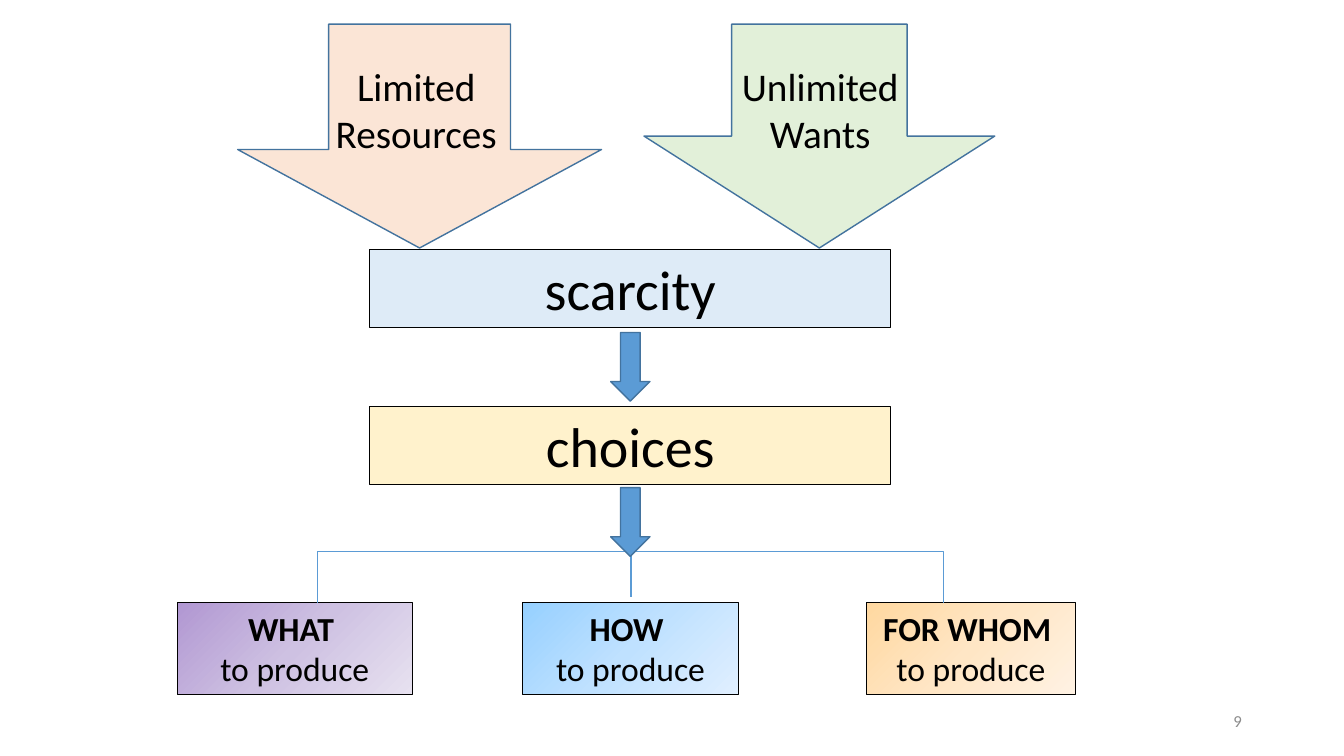
from copy import deepcopy
from dataclasses import dataclass

from pptx import Presentation
from pptx.dml.color import RGBColor
from pptx.enum.shapes import MSO_CONNECTOR, MSO_SHAPE
from pptx.enum.text import MSO_ANCHOR, MSO_AUTO_SIZE, PP_ALIGN
from pptx.oxml.ns import qn
from pptx.shapes.autoshape import Shape
from pptx.slide import Slide
from pptx.util import Cm, Pt

FONT = "Calibri"
COLORS = {
    "black": "000000",
    "grey": "8C8C8C",
    "blue": "5B9BD5",
    "edge": "43739E",
    "peach": "FBE5D6",
    "green": "E2F0D9",
    "pale blue": "DEEBF7",
    "yellow": "FFF2CC",
}
GRADIENTS = {
    "purple": ("B197D2", "CEC1E2", "E7E1F0"),
    "sky": ("96D0FF", "BFE1FF", "E0EFFF"),
    "orange": ("FFD8A0", "FFE6C5", "FFF2E3"),
}


@dataclass(frozen=True)
class Box:
    left: float
    top: float
    width: float
    height: float


@dataclass(frozen=True)
class Arrow:
    box: Box
    fill: str
    head: float = 0.5


@dataclass(frozen=True)
class Label:
    box: Box
    text: str
    size: int


@dataclass(frozen=True)
class Panel:
    label: Label
    fill: str


CAUSES = (
    Arrow(Box(5.99, 0.61, 9.17, 5.64), "peach", 0.44),
    Arrow(Box(16.23, 0.61, 8.84, 5.64), "green"),
)
CAUSE_LABELS = (
    Label(Box(8.18, 1.45, 4.62, 2.64), "Limited\nResources", 28),
    Label(Box(18.42, 1.45, 4.5, 2.64), "Unlimited\nWants", 28),
)
STAGES = (
    Panel(Label(Box(9.32, 6.3, 13.13, 1.96), "scarcity", 40), "pale blue"),
    Panel(Label(Box(9.32, 10.24, 13.13, 1.96), "choices", 40), "yellow"),
)
QUESTIONS = (
    Panel(Label(Box(4.47, 15.19, 5.92, 2.31), "WHAT \nto produce", 24), "purple"),
    Panel(Label(Box(13.16, 15.19, 5.46, 2.31), "HOW \nto produce", 24), "sky"),
    Panel(Label(Box(21.84, 15.19, 5.26, 2.31), "FOR WHOM \nto produce", 24), "orange"),
)
STEPS = tuple(Arrow(Box(15.39, top, 0.99, 1.73), "blue") for top in (8.38, 12.29))
BRACE = Box(14.61, 6.02, 2.57, 15.77)
PAGE_NUMBER = Label(Box(23.93, 17.65, 7.62, 1.02), "9", 12)


def rgb(name: str) -> RGBColor:
    return RGBColor.from_string(COLORS[name])


def place(box: Box) -> tuple[Cm, Cm, Cm, Cm]:
    return Cm(box.left), Cm(box.top), Cm(box.width), Cm(box.height)


def add_outlined(s: Slide, kind: MSO_SHAPE, box: Box, line: str, width: float) -> Shape:
    sp = s.shapes.add_shape(kind, *place(box))
    sp.shadow.inherit = False
    sp.line.color.rgb = rgb(line)
    sp.line.width = Pt(width)
    return sp


def fill_solid(sp: Shape, name: str) -> None:
    sp.fill.solid()
    sp.fill.fore_color.rgb = rgb(name)


def fill_gradient(sp: Shape, name: str) -> None:
    sp.fill.gradient()
    sp.fill.gradient_angle = 315
    stops = sp.element.spPr.find(qn("a:gradFill")).find(qn("a:gsLst"))
    stops.insert(1, deepcopy(stops[0]))
    for i, (stop, color) in enumerate(zip(sp.fill.gradient_stops, GRADIENTS[name])):
        stop.position = i / 2
        stop.color.rgb = RGBColor.from_string(color)


def write(sp: Shape, label: Label, color: str = "black",
          align: PP_ALIGN = PP_ALIGN.CENTER) -> None:
    tf = sp.text_frame
    tf.text = label.text
    for p in tf.paragraphs:
        p.alignment = align
        for r in p.runs:
            r.font.name = FONT
            r.font.size = Pt(label.size)
            r.font.color.rgb = rgb(color)


def add_arrow(s: Slide, arrow: Arrow) -> None:
    sp = add_outlined(s, MSO_SHAPE.DOWN_ARROW, arrow.box, "edge", 1)
    sp.adjustments[1] = arrow.head
    fill_solid(sp, arrow.fill)


def add_panel(s: Slide, panel: Panel) -> Shape:
    sp = add_outlined(s, MSO_SHAPE.RECTANGLE, panel.label.box, "black", 0.75)
    if panel.fill in GRADIENTS:
        fill_gradient(sp, panel.fill)
    else:
        fill_solid(sp, panel.fill)
    write(sp, panel.label)
    tf = sp.text_frame
    tf.word_wrap = True
    tf.vertical_anchor = MSO_ANCHOR.TOP
    tf.auto_size = MSO_AUTO_SIZE.SHAPE_TO_FIT_TEXT
    return sp


def add_question(s: Slide, panel: Panel) -> None:
    sp = add_panel(s, panel)
    sp.text_frame.paragraphs[0].runs[0].font.bold = True


def add_cause_label(s: Slide, label: Label) -> None:
    sp = s.shapes.add_textbox(*place(label.box))
    write(sp, label)
    sp.text_frame.word_wrap = False
    sp.text_frame.auto_size = MSO_AUTO_SIZE.SHAPE_TO_FIT_TEXT


def add_branches(s: Slide) -> None:
    brace = add_outlined(s, MSO_SHAPE.RIGHT_BRACE, BRACE, "blue", 0.5)
    brace.fill.background()
    brace.rotation = 270
    brace.adjustments[0] = 0
    stem = s.shapes.add_connector(
        MSO_CONNECTOR.STRAIGHT, Cm(15.9), Cm(13.77), Cm(15.9), Cm(15.04))
    stem.line.color.rgb = rgb("blue")
    stem.line.width = Pt(1.5)
    sp_pr = stem.element.spPr
    sp_pr.append(sp_pr.makeelement(qn("a:effectLst"), {}))


def add_page_number(s: Slide) -> None:
    sp = s.shapes.add_textbox(*place(PAGE_NUMBER.box))
    write(sp, PAGE_NUMBER, "grey", PP_ALIGN.RIGHT)
    sp.text_frame.word_wrap = True
    sp.text_frame.vertical_anchor = MSO_ANCHOR.MIDDLE


def main() -> None:
    prs = Presentation()
    prs.slide_width, prs.slide_height = Cm(33.87), Cm(19.05)
    s = prs.slides.add_slide(prs.slide_layouts.get_by_name("Blank"))
    for arrow in CAUSES:
        add_arrow(s, arrow)
    for label in CAUSE_LABELS:
        add_cause_label(s, label)
    for panel in STAGES:
        add_panel(s, panel)
    for panel in QUESTIONS:
        add_question(s, panel)
    add_branches(s)
    for arrow in STEPS:
        add_arrow(s, arrow)
    add_page_number(s)
    prs.save("out.pptx")


if __name__ == "__main__":
    main()
